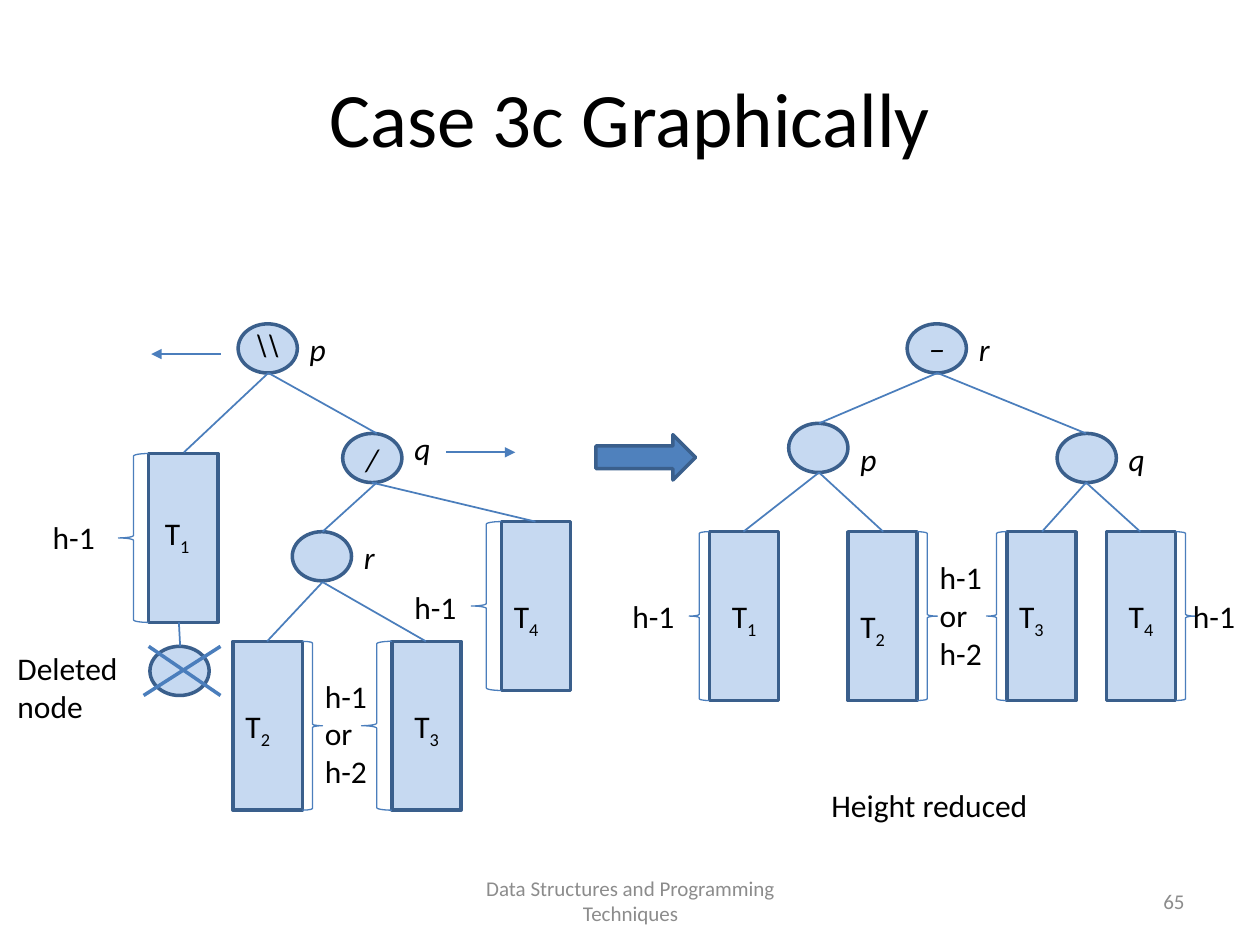
import pptx
import pptx.util
import pptx.dml.color
import pptx.enum.shapes
import pptx.enum.text
import pptx.oxml
import pptx.oxml.ns

Inches = pptx.util.Inches
Pt = pptx.util.Pt
SHAPES = pptx.enum.shapes.MSO_SHAPE
ALIGN = pptx.enum.text.PP_ALIGN
ANCHOR = pptx.enum.text.MSO_ANCHOR

PALE, BLUE, OUTLINE, EDGE = "C6D9F1", "4F81BD", "3A5F8C", "4B7EBC"
BLACK, GREY = "000000", "8C8C8C"
NODE_WIDTH, NODE_HEIGHT = 0.47, 0.39
TREE_WIDTH, TREE_HEIGHT = 0.55, 1.34
LINE_HEIGHT = 0.4


def color(hex_text):
    return pptx.dml.color.RGBColor.from_string(hex_text)


def add_text(page, text, left, top, width, height=LINE_HEIGHT, size=18, fill=BLACK,
             italic=False, align=ALIGN.LEFT, anchor=ANCHOR.TOP, subscript=""):
    box = page.shapes.add_textbox(Inches(left), Inches(top), Inches(width), Inches(height))
    frame = box.text_frame
    frame.word_wrap = True
    frame.vertical_anchor = anchor
    for index, line in enumerate(text.split("\n")):
        para = frame.paragraphs[0] if index == 0 else frame.add_paragraph()
        para.alignment = align
        for part in filter(None, (line, subscript)):
            span = para.add_run()
            span.text = part
            span.font.name = "Calibri"
            span.font.size = Pt(size)
            span.font.italic = italic
            span.font.color.rgb = color(fill)
    if subscript:
        span._r.get_or_add_rPr().set("baseline", "-25000")


def add_shape(page, kind, left, top, width, height, fill=None, line=OUTLINE, weight=2):
    shape = page.shapes.add_shape(kind, Inches(left), Inches(top), Inches(width), Inches(height))
    shape.shadow.inherit = False
    if fill:
        shape.fill.solid()
        shape.fill.fore_color.rgb = color(fill)
    else:
        shape.fill.background()
    shape.line.color.rgb = color(line)
    shape.line.width = Pt(weight)


def add_line(page, start, end, weight=1, arrow=False):
    line = page.shapes.add_connector(pptx.enum.shapes.MSO_CONNECTOR.STRAIGHT,
                                     *(Inches(value) for value in (*start, *end)))
    line.line.color.rgb = color(EDGE)
    line.line.width = Pt(weight)
    if arrow:
        tip = pptx.oxml.parse_xml(
            f'<a:tailEnd {pptx.oxml.ns.nsdecls("a")} type="triangle"/>')
        line.line._get_or_add_ln().append(tip)
    effects = pptx.oxml.parse_xml(f'<a:effectLst {pptx.oxml.ns.nsdecls("a")}/>')
    line._element.spPr.append(effects)


def add_node(page, name, left, top, name_shift=0.0, balance="", balance_shift=0.0):
    """Draw a tree node with its name at the right and its balance sign inside."""
    add_shape(page, SHAPES.OVAL, left, top, NODE_WIDTH, NODE_HEIGHT, fill=PALE)
    add_text(page, name, left + NODE_WIDTH, top + name_shift, NODE_WIDTH, italic=True)
    if balance:
        add_text(page, balance, left, top + balance_shift, NODE_WIDTH,
                 italic=True, align=ALIGN.CENTER)


def add_subtree(page, number, left, top, label_shift, brace_side, brace_width):
    """Draw a subtree block with its label and a height brace on one side."""
    add_shape(page, SHAPES.RECTANGLE, left, top, TREE_WIDTH, TREE_HEIGHT, fill=PALE)
    if brace_side == "left":
        kind, brace_left = SHAPES.LEFT_BRACE, left - brace_width
    else:
        kind, brace_left = SHAPES.RIGHT_BRACE, left + TREE_WIDTH
    add_shape(page, kind, brace_left, top, brace_width, TREE_HEIGHT, line=EDGE, weight=0.75)
    across, down = label_shift
    add_text(page, "T", left + across, top + down, NODE_WIDTH, subscript=number)


def add_edges(page, parent, *children):
    for child in children:
        add_line(page, parent, child)


def add_height(page, left, top):
    add_text(page, "h-1", left, top, 0.63)


def add_height_choice(page, left, top, width):
    add_text(page, "h-1\nor\nh-2", left, top, width, 1.01)


def add_deleted_node(page):
    add_shape(page, SHAPES.OVAL, 1.19, 5.13, NODE_WIDTH, NODE_HEIGHT, fill=PALE)
    add_line(page, (1.42, 4.94), (1.43, 5.13))
    add_line(page, (1.14, 5.52), (1.75, 5.13), weight=2)
    add_line(page, (1.18, 5.13), (1.75, 5.52), weight=2)
    add_text(page, "Deleted\nnode", 0.04, 5.1, 1.18, 0.71)


def add_tree_before(page):
    for number, left, top, label_shift, side, brace_width in (
            ("1", 1.18, 3.6, (0.03, 0.43), "left", 0.24),
            ("2", 1.85, 5.09, (0, 0.47), "right", 0.16),
            ("3", 3.11, 5.09, (0.08, 0.47), "left", 0.24),
            ("4", 3.98, 4.14, (0, 0.55), "left", 0.24)):
        add_subtree(page, number, left, top, label_shift, side, brace_width)
    add_node(page, "p", 1.89, 2.57, balance=r"\\", balance_shift=-0.04)
    add_node(page, "q", 2.72, 3.44, name_shift=-0.08, balance="/")
    add_node(page, "r", 2.32, 4.22)
    add_edges(page, (2.13, 2.96), (1.46, 3.59), (2.99, 3.44))
    add_edges(page, (2.99, 3.83), (2.56, 4.22))
    add_edges(page, (2.95, 3.83), (4.25, 4.14))
    add_edges(page, (2.56, 4.62), (2.12, 5.09), (3.38, 5.09))
    add_line(page, (1.75, 2.81), (1.2, 2.81), arrow=True)
    add_line(page, (3.54, 3.59), (4.09, 3.59), arrow=True)
    add_height(page, 0.32, 4.06)
    add_height(page, 3.19, 4.62)
    add_height_choice(page, 2.48, 5.32, 0.63)
    add_deleted_node(page)


def add_tree_after(page):
    for number, left, label_shift, side in (
            ("1", 5.63, (0.08, 0.47), "left"),
            ("2", 6.73, (0, 0.55), "right"),
            ("3", 7.99, (0, 0.47), "left"),
            ("4", 8.78, (0.08, 0.47), "right")):
        add_subtree(page, number, left, 4.22, label_shift, side, 0.16)
    add_node(page, "r", 7.2, 2.57, balance="−")
    add_node(page, "p", 6.26, 3.36, name_shift=0.08)
    add_node(page, "q", 8.39, 3.44)
    add_edges(page, (7.44, 2.96), (6.5, 3.36), (8.62, 3.44))
    add_edges(page, (6.5, 3.75), (5.9, 4.22), (7.01, 4.22))
    add_edges(page, (8.62, 3.83), (8.27, 4.22), (9.05, 4.22))
    add_height(page, 4.92, 4.69)
    add_height(page, 9.37, 4.69)
    add_height_choice(page, 7.36, 4.38, 0.71)
    add_text(page, "Height reduced", 6.5, 6.19, 2.28)


def main():
    deck = pptx.Presentation()
    deck.slide_width, deck.slide_height = Inches(10), Inches(7.5)
    page = deck.slides.add_slide(deck.slide_layouts[6])
    add_text(page, "Case 3c Graphically", 0.5, 0.3, 9, 1.25, size=44,
             align=ALIGN.CENTER, anchor=ANCHOR.MIDDLE)
    add_tree_before(page)
    add_shape(page, SHAPES.RIGHT_ARROW, 4.73, 3.45, 0.79, 0.36, fill=BLUE)
    add_tree_after(page)
    add_text(page, "Data Structures and Programming Techniques", 3.42, 6.95, 3.17,
             size=12, fill=GREY, align=ALIGN.CENTER, anchor=ANCHOR.MIDDLE)
    add_text(page, "65", 7.17, 6.95, 2.33, size=12, fill=GREY,
             align=ALIGN.RIGHT, anchor=ANCHOR.MIDDLE)
    deck.save("out.pptx")


if __name__ == "__main__":
    main()
